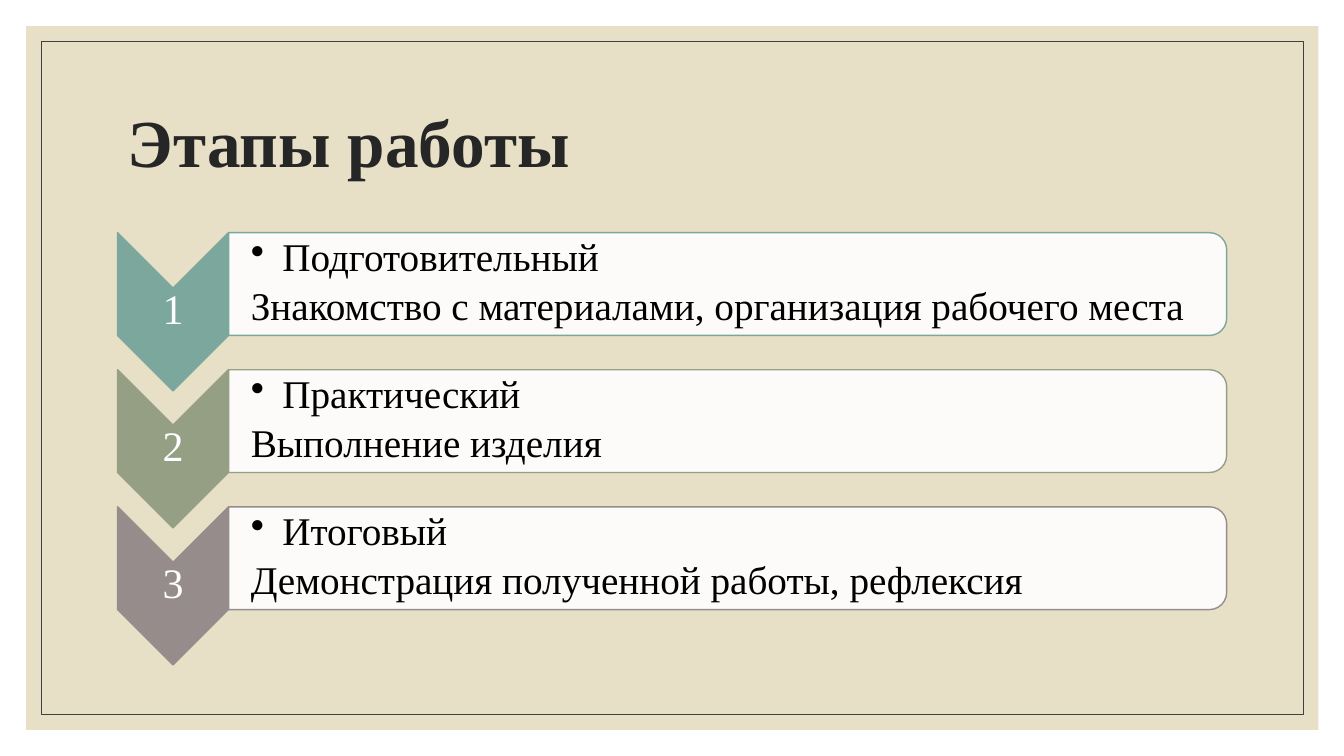
from lxml import etree
from pptx import Presentation
from pptx.dml.color import RGBColor
from pptx.enum.shapes import MSO_SHAPE
from pptx.enum.text import MSO_ANCHOR, PP_ALIGN
from pptx.oxml.ns import qn
from pptx.util import Pt

RECTANGLE = MSO_SHAPE.RECTANGLE
CHEVRON = MSO_SHAPE.CHEVRON
ROUNDED_PANEL = MSO_SHAPE.ROUND_2_SAME_RECTANGLE
MIDDLE = MSO_ANCHOR.MIDDLE
LEFT, CENTER = PP_ALIGN.LEFT, PP_ALIGN.CENTER

FONT = "Times New Roman"
COLORS = {
    "sand": "E7E0C7",
    "frame": "404040",
    "title": "262626",
    "white": "FFFFFF",
    "black": "000000",
    "teal": "7BA79D",
    "olive": "949F83",
    "mauve": "968C8C",
}
STAGES = [
    ("teal", "Подготовительный", "Знакомство с материалами, организация рабочего места"),
    ("olive", "Практический", "Выполнение изделия"),
    ("mauve", "Итоговый", "Демонстрация полученной работы, рефлексия"),
]
FIRST_STAGE_TOP = 166.2
STAGE_PITCH = 97.9
INDENT = 22.5


def color(name):
    """Return the named colour."""
    return RGBColor.from_string(COLORS[name])


def add_box(shapes, kind, box, fill=None, line=None, width=1, opacity=100):
    """Add a preset shape with an optional fill and outline."""
    shape = shapes.add_shape(kind, *map(Pt, box))
    shape.shadow.inherit = False
    if fill:
        shape.fill.solid()
        shape.fill.fore_color.rgb = color(fill)
        if opacity < 100:
            fill_color = shape.element.spPr.find(qn("a:solidFill"))[0]
            etree.SubElement(fill_color, qn("a:alpha"), val=str(opacity * 1000))
    else:
        shape.fill.background()
    if line:
        shape.line.color.rgb = color(line)
        shape.line.width = Pt(width)
    else:
        shape.line.fill.background()
    return shape


def add_turned_box(shapes, kind, box, **style):
    """Add a shape turned a quarter clockwise that covers the given box."""
    left, top, width, height = box
    shift = (width - height) / 2
    shape = add_box(shapes, kind, (left + shift, top - shift, height, width), **style)
    shape.rotation = 90


def add_run(paragraph, text, size, color_name, bold=False):
    """Add one formatted run to a paragraph."""
    run = paragraph.add_run()
    run.text = text
    run.font.name = FONT
    run.font.size = Pt(size)
    run.font.bold = bold
    run.font.color.rgb = color(color_name)


def add_text_frame(shapes, box, left_inset=1.5):
    """Add a wrapping, vertically centred text box and return its frame."""
    frame = shapes.add_textbox(*map(Pt, box)).text_frame
    frame.word_wrap = True
    frame.vertical_anchor = MIDDLE
    frame.margin_left = Pt(left_inset)
    frame.margin_top = frame.margin_right = frame.margin_bottom = Pt(1.5)
    return frame


def format_stage_line(paragraph, bulleted):
    """Give a stage line its spacing, hanging indent and bullet."""
    paragraph.level = 1
    paragraph.alignment = LEFT
    paragraph.line_spacing = 0.9
    paragraph.space_after = Pt(5)
    properties = paragraph._p.get_or_add_pPr()
    properties.set("marL", str(Pt(INDENT)))
    properties.set("indent", str(-Pt(INDENT)))
    if bulleted:
        etree.SubElement(properties, qn("a:buChar"), char="•")
    else:
        etree.SubElement(properties, qn("a:buNone"))


def add_stage(shapes, number, accent, name, description):
    """Add the numbered chevron and the text panel of one stage."""
    top = FIRST_STAGE_TOP + (number - 1) * STAGE_PITCH
    add_turned_box(shapes, CHEVRON, (84, top, 79.2, 113), fill=accent, line=accent)
    number_frame = add_text_frame(shapes, (84, top + 39, 79.2, 34))
    paragraph = number_frame.paragraphs[0]
    paragraph.alignment = CENTER
    paragraph.line_spacing = 0.9
    add_run(paragraph, str(number), 30, "white")

    add_turned_box(shapes, ROUNDED_PANEL, (163.4, top, 712.8, 73.4),
                   fill="white", line=accent, opacity=90)
    text_frame = add_text_frame(shapes, (163.4, top + 3, 709.2, 66.2), left_inset=15.8)
    name_line, description_line = text_frame.paragraphs[0], text_frame.add_paragraph()
    format_stage_line(name_line, True)
    add_run(name_line, name, 28, "black")
    format_stage_line(description_line, False)
    add_run(description_line, description, 28, "black")


def add_title(slide, text):
    """Place and format the title above the background panels."""
    title = slide.shapes.title
    title.left, title.top, title.width, title.height = map(Pt, (84.2, 50.4, 792, 108))
    title.element.getparent().append(title.element)
    title.text_frame.vertical_anchor = MIDDLE
    paragraph = title.text_frame.paragraphs[0]
    paragraph.alignment = LEFT
    paragraph.line_spacing = 0.9
    add_run(paragraph, text, 48, "title", bold=True)


def main():
    """Build and save the slide."""
    presentation = Presentation()
    presentation.slide_width, presentation.slide_height = Pt(960), Pt(540)
    slide = presentation.slides.add_slide(presentation.slide_layouts[5])
    add_box(slide.shapes, RECTANGLE, (18.7, 18.7, 923, 502.6), fill="sand")
    add_box(slide.shapes, RECTANGLE, (29.5, 29.5, 901.4, 481), line="frame", width=0.5)
    add_title(slide, "Этапы работы")
    diagram = slide.shapes.add_group_shape()
    for number, stage in enumerate(STAGES, start=1):
        add_stage(diagram.shapes, number, *stage)
    presentation.save("out.pptx")


if __name__ == "__main__":
    main()
